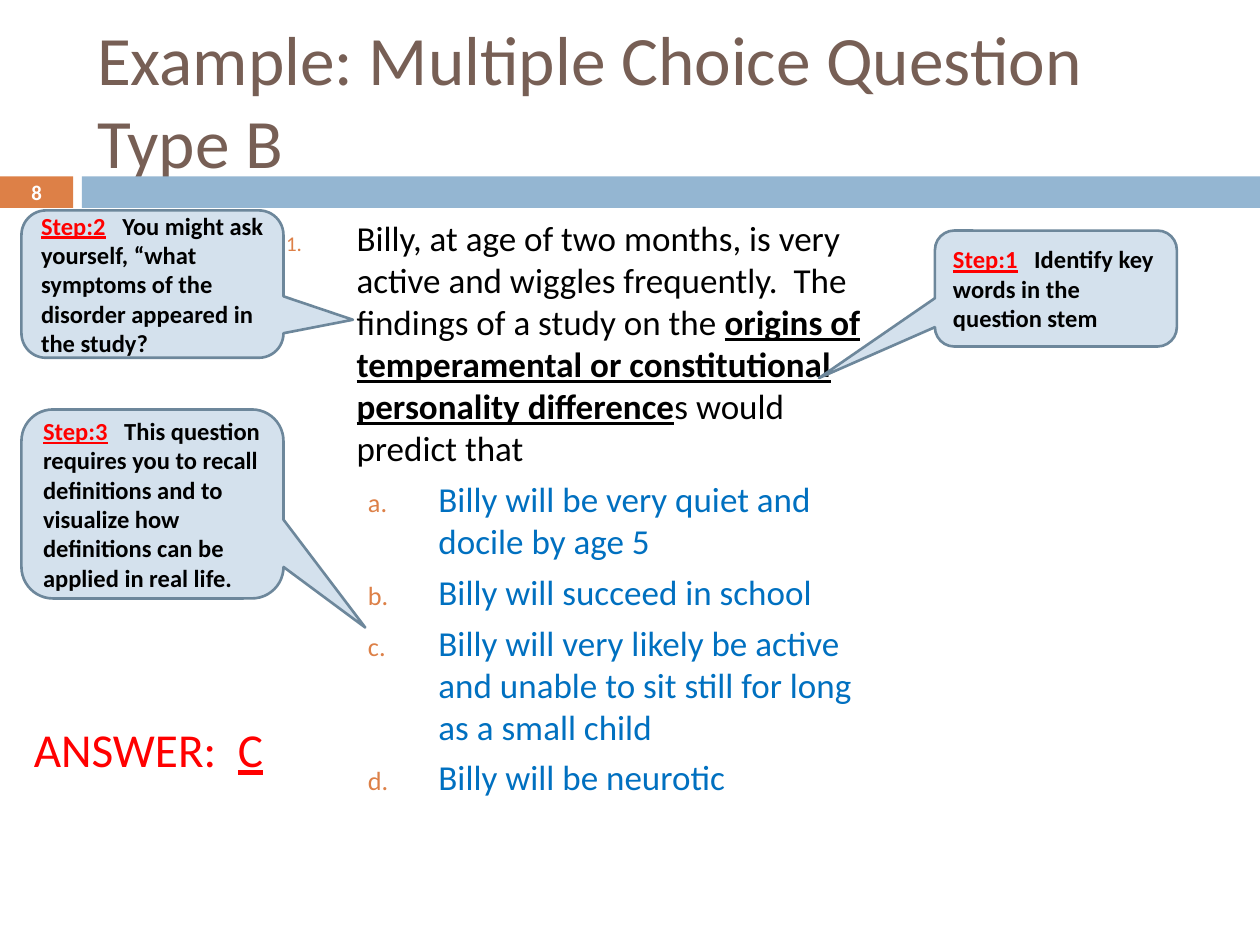
from lxml import etree
from pptx import Presentation
from pptx.dml.color import RGBColor
from pptx.enum import shapes, text
from pptx.oxml.ns import qn
from pptx.util import Inches, Pt

COLORS = {
    "title": "775F55", "orange": "DD8047", "blue": "94B6D2", "edge": "6D879B",
    "black": "000000", "choice": "0070C0", "red": "FF0000", "white": "FFFFFF",
}


def add_run(p, content, size, color, bold=False, underline=False):
    r = p.add_run()
    r.text = content
    r.font.name = "Calibri"
    r.font.size = Pt(size)
    r.font.color.rgb = RGBColor.from_string(COLORS[color])
    r.font.bold = bold
    r.font.underline = underline


def set_list(p, left, before=0, scheme=None, bullet_size=100):
    """Give a paragraph a hanging indent and, with a scheme, automatic numbering."""
    p.space_before = Pt(before)
    pPr = p._p.get_or_add_pPr()
    pPr.set("marL", str(Inches(left)))
    pPr.set("indent", str(Inches(-0.56)))
    if scheme:
        color = etree.SubElement(pPr, qn("a:buClr"))
        etree.SubElement(color, qn("a:srgbClr"), val=COLORS["orange"])
        etree.SubElement(pPr, qn("a:buSzPct"), val=str(bullet_size * 1000))
        etree.SubElement(pPr, qn("a:buFont"), typeface="Calibri")
        etree.SubElement(pPr, qn("a:buAutoNum"), type=scheme)


prs = Presentation()
prs.slide_width, prs.slide_height = Inches(10), Inches(7.5)
s = prs.slides.add_slide(prs.slide_layouts[1])

# Header bars
for left, width, color in [(0, 0.58, "orange"), (0.65, 9.35, "blue")]:
    bar = s.shapes.add_shape(shapes.MSO_SHAPE.RECTANGLE,
                             Inches(left), Inches(1.4), Inches(width), Inches(0.25))
    bar.shadow.inherit = False
    bar.fill.solid()
    bar.fill.fore_color.rgb = RGBColor.from_string(COLORS[color])
    bar.line.fill.background()

# Title
title = s.shapes.title
title.left, title.top, title.width, title.height = map(Inches, (0.67, 0.25, 8.92, 1.08))
tf = title.text_frame
tf.auto_size = text.MSO_AUTO_SIZE.NONE
tf.vertical_anchor = text.MSO_ANCHOR.MIDDLE
p = tf.paragraphs[0]
p.alignment = text.PP_ALIGN.LEFT
add_run(p, "Example: Multiple Choice Question  Type B", 39.6, "title")

# Question and choices
body = s.placeholders[1]
body.left, body.top, body.width, body.height = map(Inches, (2.17, 1.67, 4.91, 5.42))
tf = body.text_frame
tf.auto_size = text.MSO_AUTO_SIZE.NONE
p = tf.paragraphs[0]
set_list(p, 0.56, 7, "arabicPeriod", 60)
add_run(p, "Billy, at age of two months, is very active and wiggles frequently.  "
           "The findings of a study on the ", 20, "black")
add_run(p, "origins of temperamental or constitutional personality difference",
        20, "black", bold=True, underline=True)
add_run(p, "s would predict that", 20, "black")

choices = [
    "Billy will be very quiet and docile by age 5",
    "Billy will succeed in school",
    "Billy will very likely be active and unable to sit still for long as a small child",
    "Billy will be neurotic",
]
for choice in choices:
    p = tf.add_paragraph()
    p.level = 1
    set_list(p, 1.21, 5, "alphaLcPeriod", 75)
    add_run(p, choice, 20, "choice")

# Step callouts: box, pointer tip, label, advice
callouts = [
    ((7.42, 1.83, 1.92, 0.92), (-0.979, 0.772), "Step:1",
     "Identify key words in the question stem"),
    ((0.17, 1.67, 2.08, 1.17), (0.765, 0.242), "Step:2",
     "You might ask yourself, “what symptoms of the disorder appeared in the study?"),
    ((0.17, 3.25, 2.08, 1.5), (0.812, 0.654), "Step:3",
     "This question requires you to recall definitions and to  visualize "
     "how definitions can be applied in real life."),
]
for box, tip, label, advice in callouts:
    sp = s.shapes.add_shape(shapes.MSO_SHAPE.ROUNDED_RECTANGULAR_CALLOUT, *map(Inches, box))
    sp.adjustments[0], sp.adjustments[1] = tip
    sp.shadow.inherit = False
    sp.fill.solid()
    sp.fill.fore_color.rgb = RGBColor.from_string(COLORS["blue"])
    fill_color = sp._element.spPr.find(qn("a:solidFill")).find(qn("a:srgbClr"))
    etree.SubElement(fill_color, qn("a:alpha"), val="40000")
    sp.line.color.rgb = RGBColor.from_string(COLORS["edge"])
    sp.line.width = Pt(1.5)
    tf = sp.text_frame
    tf.word_wrap = True
    tf.vertical_anchor = text.MSO_ANCHOR.MIDDLE
    p = tf.paragraphs[0]
    p.alignment = text.PP_ALIGN.LEFT
    add_run(p, label, 14, "red", bold=True, underline=True)
    add_run(p, "   " + advice, 14, "black", bold=True)

# Answer
answer = s.shapes.add_textbox(*map(Inches, (0.17, 5.67, 2.17, 0.56)))
tf = answer.text_frame
tf.word_wrap = True
p = tf.paragraphs[0]
set_list(p, 0.56)
add_run(p, "ANSWER:  ", 27, "red")
add_run(p, "C", 27, "red", underline=True)

# Slide number
number = s.shapes.add_textbox(*map(Inches, (0, 1.39, 0.58, 0.27)))
tf = number.text_frame
tf.word_wrap = True
tf.vertical_anchor = text.MSO_ANCHOR.MIDDLE
p = tf.paragraphs[0]
p.alignment = text.PP_ALIGN.CENTER
add_run(p, "8", 11.9, "white", bold=True)

prs.save("out.pptx")
